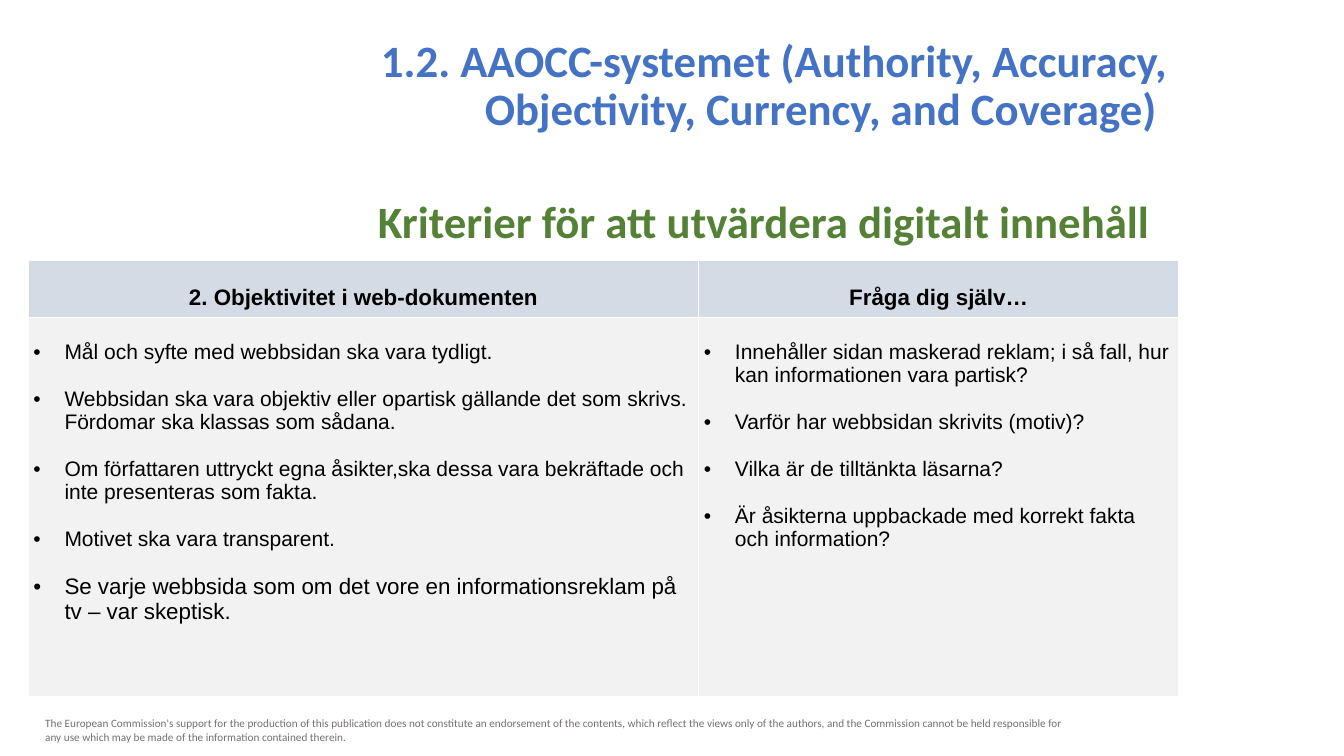
from lxml import etree
from pptx import Presentation
from pptx.dml.color import RGBColor
from pptx.enum.text import MSO_ANCHOR as Anchor, PP_ALIGN as Align
from pptx.oxml.ns import qn
from pptx.util import Emu, Inches, Pt

# Content
TITLE = "1.2. AAOCC-systemet (Authority, Accuracy, Objectivity, Currency, and Coverage) "
SUBTITLE = "Kriterier för att utvärdera digitalt innehåll"
DISCLAIMER = (
    "The European Commission's support for the production of this publication does not "
    "constitute an endorsement of the contents, which reflect the views only of the authors, "
    "and the Commission cannot be held responsible for any use which may be made of the "
    "information contained therein."
)
# Each column: width, heading, list of (bullet text, size)
COLUMNS = [
    (6.65, "2. Objektivitet i web-dokumenten", [
        ("Mål och syfte med webbsidan ska vara tydligt.", 15),
        ("Webbsidan ska vara objektiv eller opartisk gällande det som skrivs. "
         "Fördomar ska klassas som sådana.", 15),
        ("Om författaren uttryckt egna åsikter,ska dessa vara bekräftade och "
         "inte presenteras som fakta.", 15),
        ("Motivet ska vara transparent.", 15),
        ("Se varje webbsida som om det vore en informationsreklam på tv – var skeptisk.", 16),
    ]),
    (4.76, "Fråga dig själv…", [
        ("Innehåller sidan maskerad reklam; i så fall, hur kan informationen vara partisk?", 15),
        ("Varför har webbsidan skrivits (motiv)?", 15),
        ("Vilka är de tilltänkta läsarna?", 15),
        ("Är åsikterna uppbackade med korrekt fakta och information?", 15),
    ]),
]
HEADER_HEIGHT, BODY_HEIGHT = 0.57, 3.76
BULLET_INDENT = 0.31
BULLET_GAP = 16.75


def color(value):
    return RGBColor.from_string(value)


def add_bullet(paragraph):
    properties = paragraph._p.get_or_add_pPr()
    properties.set("marL", str(Inches(BULLET_INDENT)))
    properties.set("indent", str(-Inches(BULLET_INDENT)))
    bullet_color = etree.SubElement(properties, qn("a:buClr"))
    etree.SubElement(bullet_color, qn("a:srgbClr"), val="000000")
    etree.SubElement(properties, qn("a:buFont"), typeface="Arial")
    etree.SubElement(properties, qn("a:buChar"), char="•")


def write(paragraph, text, size, font="Arial", fill="000000", bold=False,
          align=Align.LEFT, line_spacing=1.0, before=0, bullet=False):
    if bullet:
        add_bullet(paragraph)
    paragraph.alignment = align
    paragraph.line_spacing = line_spacing
    paragraph.space_before = Pt(before)
    run = paragraph.add_run()
    run.text = text
    run.font.size = Pt(size)
    run.font.name = font
    run.font.bold = bold
    run.font.color.rgb = color(fill)


def place(shape, left, top, width, height):
    shape.left, shape.top = Inches(left), Inches(top)
    shape.width, shape.height = Inches(width), Inches(height)


def add_text(slide, text, box, **text_format):
    shape = slide.shapes.add_textbox(*map(Inches, box))
    shape.text_frame.word_wrap = True
    write(shape.text_frame.paragraphs[0], text, **text_format)


def format_cell(cell, fill, margin_top):
    cell.fill.solid()
    cell.fill.fore_color.rgb = color(fill)
    cell.vertical_anchor = Anchor.TOP
    cell.margin_left = cell.margin_right = Inches(0.05)
    cell.margin_top, cell.margin_bottom = Inches(margin_top), 0
    # White border on each side, ahead of the fill
    properties = cell._tc.get_or_add_tcPr()
    for position, side in enumerate(("lnL", "lnR", "lnT", "lnB")):
        line = etree.Element(qn(f"a:{side}"), w=str(Pt(1)))
        solid = etree.SubElement(line, qn("a:solidFill"))
        etree.SubElement(solid, qn("a:srgbClr"), val="FFFFFF")
        properties.insert(position, line)


def add_criteria_table(slide):
    width = sum(column[0] for column in COLUMNS)
    table = slide.shapes.add_table(
        2, len(COLUMNS), Inches(0.28), Inches(2.58),
        Inches(width), Inches(HEADER_HEIGHT + BODY_HEIGHT)).table
    table.horz_banding = False
    table.rows[0].height = Inches(HEADER_HEIGHT)
    table.rows[1].height = Inches(BODY_HEIGHT)
    for index, (column_width, heading, bullets) in enumerate(COLUMNS):
        table.columns[index].width = Inches(column_width)
        header, body = table.cell(0, index), table.cell(1, index)
        format_cell(header, "D5DBE5", 0.25)
        write(header.text_frame.paragraphs[0], heading, 16, bold=True, align=Align.CENTER)
        format_cell(body, "F2F2F2", 0.23)
        frame = body.text_frame
        for number, (text, size) in enumerate(bullets):
            paragraph = frame.add_paragraph() if number else frame.paragraphs[0]
            write(paragraph, text, size, before=BULLET_GAP if number else 0, bullet=True)


def main():
    presentation = Presentation()
    presentation.slide_width, presentation.slide_height = Inches(13.33), Inches(7.5)
    slide = presentation.slides.add_slide(presentation.slide_layouts[5])

    # Title
    title = slide.shapes.title
    place(title, 2.46, 0.33, 9.22, 1.1)
    title.text_frame.word_wrap = True
    title.text_frame.vertical_anchor = Anchor.TOP
    write(title.text_frame.paragraphs[0], TITLE, 32, font="Calibri", fill="4472C4",
          bold=True, align=Align.RIGHT, line_spacing=0.9)

    # Subtitle, table and disclaimer
    add_text(slide, SUBTITLE, (3.65, 1.87, 8.04, 0.64),
             size=32, font="Calibri", fill="548135", bold=True)
    add_criteria_table(slide)
    add_text(slide, DISCLAIMER, (0.35, 7.06, 10.46, 0.37),
             size=8, font="Calibri", fill="757070")
    presentation.save("out.pptx")


if __name__ == "__main__":
    main()
